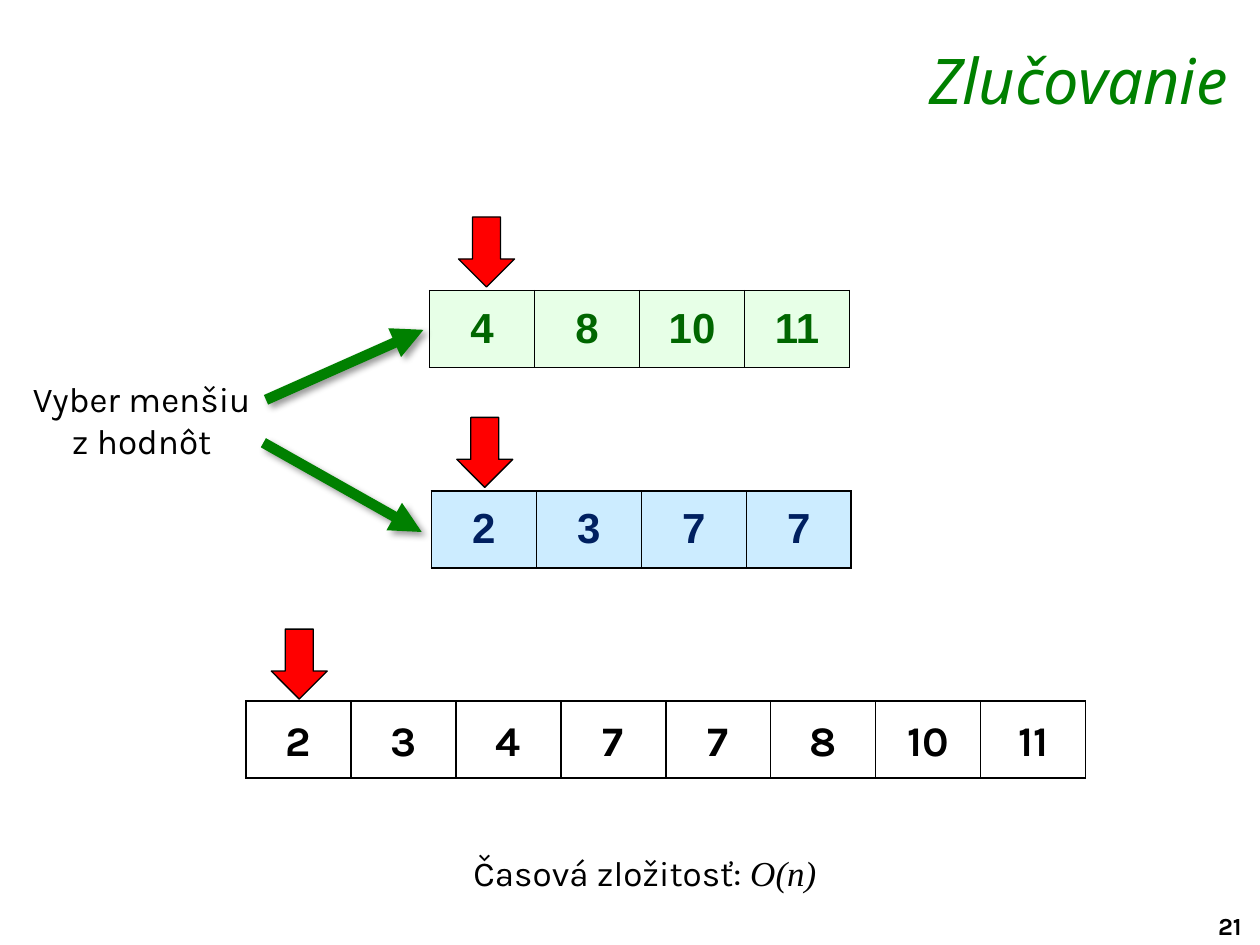
from lxml import etree
from pptx import Presentation
from pptx.dml.color import RGBColor
from pptx.enum.shapes import MSO_CONNECTOR as CONN, MSO_SHAPE as SHAPE
from pptx.enum.text import MSO_ANCHOR as ANCHOR, PP_ALIGN as ALIGN
from pptx.oxml.ns import qn
from pptx.util import Pt

COLORS = {
    "black": "000000", "green": "008000", "red": "FF0000",
    "green_text": "006600", "green_cell": "E7FFE7",
    "blue_text": "002060", "blue_cell": "CCECFF",
}
CELL_W, CELL_H = 60, 44
ARROW_W, ARROW_H = 32, 40


def rgb(name):
    return RGBColor.from_string(COLORS[name])


def sub(parent, tag, **attrs):
    return etree.SubElement(parent, qn(tag), attrs)


def style_run(r, size, font="Karla", color="black", bold=False, italic=False):
    r.font.size = Pt(size)
    r.font.name = font
    r.font.color.rgb = rgb(color)
    r.font.bold = bold
    r.font.italic = italic


def add_text(s, box, text, size, align=ALIGN.CENTER, wrap=True, **style):
    tf = s.shapes.add_textbox(*map(Pt, box)).text_frame
    tf.word_wrap = wrap
    p = tf.paragraphs[0]
    p.text = text
    p.alignment = align
    for r in p.runs:
        style_run(r, size, **style)
    return tf


def add_borders(cell):
    tc_pr = cell._tc.get_or_add_tcPr()
    for i, side in enumerate(("a:lnL", "a:lnR", "a:lnT", "a:lnB")):
        ln = etree.Element(qn(side), w=str(Pt(1)))
        sub(sub(ln, "a:solidFill"), "a:srgbClr", val=COLORS["black"])
        tc_pr.insert(i, ln)


def add_array(s, left, top, values, fill=None, color="black"):
    """One-row table; without a fill, the values lie over it as labels."""
    n = len(values)
    frame = s.shapes.add_table(1, n, Pt(left), Pt(top), Pt(n * CELL_W), Pt(CELL_H))
    table = frame.table
    table.first_row = table.horz_banding = False
    table.rows[0].height = Pt(CELL_H)
    for i, value in enumerate(values):
        table.columns[i].width = Pt(CELL_W)
        cell = table.cell(0, i)
        if fill:
            cell.fill.solid()
            cell.fill.fore_color.rgb = rgb(fill)
            cell.vertical_anchor = ANCHOR.MIDDLE
            p = cell.text_frame.paragraphs[0]
            p.text = value
            p.alignment = ALIGN.CENTER
            style_run(p.runs[0], 24, "Arial", color, bold=True)
        else:
            cell.fill.background()
            add_text(s, (left + i * CELL_W, top + 4, CELL_W, 36), value, 24, bold=True)
        add_borders(cell)


def add_pointer(s, left, top):
    sp = s.shapes.add_shape(SHAPE.DOWN_ARROW, Pt(left), Pt(top), Pt(ARROW_W), Pt(ARROW_H))
    sp.shadow.inherit = False
    sp.fill.solid()
    sp.fill.fore_color.rgb = rgb("red")
    sp.line.color.rgb = rgb("black")
    sp.line.width = Pt(0.75)


def add_choice_arrow(s, start, end):
    line = s.shapes.add_connector(CONN.STRAIGHT, *map(Pt, start + end))
    line.line.color.rgb = rgb("green")
    line.line.width = Pt(6)
    sub(line.line._get_or_add_ln(), "a:tailEnd", type="triangle")
    effects = sub(line._element.spPr, "a:effectLst")
    shadow = sub(effects, "a:outerShdw", blurRad=str(Pt(4)), dist=str(Pt(3)),
                 dir="2700000", algn="tl", rotWithShape="0")
    sub(sub(shadow, "a:srgbClr", val=COLORS["black"]), "a:alpha", val="40000")


def add_header(s, left, top, width, height):
    tf = add_text(s, (left, top, width, height), "Zlučovanie", 36, ALIGN.RIGHT,
                  font="Noto Sans", color="green", italic=True)
    tf.margin_top = tf.margin_bottom = Pt(1.5)


def add_merge(s, left, top):
    # Arrays: two sorted inputs and the merged result
    add_array(s, left + 245.5, top + 42, ["4", "8", "10", "11"], "green_cell", "green_text")
    add_array(s, left + 246.5, top + 156.5, ["2", "3", "7", "7"], "blue_cell", "blue_text")
    add_array(s, left + 140.5, top + 276.5, ["2", "3", "4", "7", "7", "8", "10", "11"])
    # Current position in each array
    for x, y in ((262, 0), (261, 114.5), (155, 235.5)):
        add_pointer(s, left + x, top + y)
    # Choice of the smaller value
    add_text(s, (left, top + 88, 162, 55.5), "Vyber menšiu\vz hodnôt", 20)
    for start, end in (((152, 104.5), (242, 64.5)), ((150.5, 129), (241, 180))):
        add_choice_arrow(s, (left + start[0], top + start[1]), (left + end[0], top + end[1]))


def add_footer(s, left, top):
    tf = add_text(s, (left, top, 215.5, 31.5), "Časová zložitosť: ", 20, ALIGN.LEFT, wrap=False)
    r = tf.paragraphs[0].add_run()
    r.text = "O(n)"
    style_run(r, 20, "Times New Roman", italic=True)
    # Page number
    add_text(s, (left + 425.5, top + 34, 36.5, 24), "21", 14, ALIGN.LEFT, wrap=False, bold=True)


def main():
    prs = Presentation()
    prs.slide_width, prs.slide_height = Pt(720), Pt(540)
    s = prs.slides.add_slide(prs.slide_layouts[6])
    add_header(s, 165, 22.5, 543.5, 42)
    add_merge(s, 0, 124)
    add_footer(s, 263.5, 483)
    prs.save("out.pptx")


if __name__ == "__main__":
    main()
